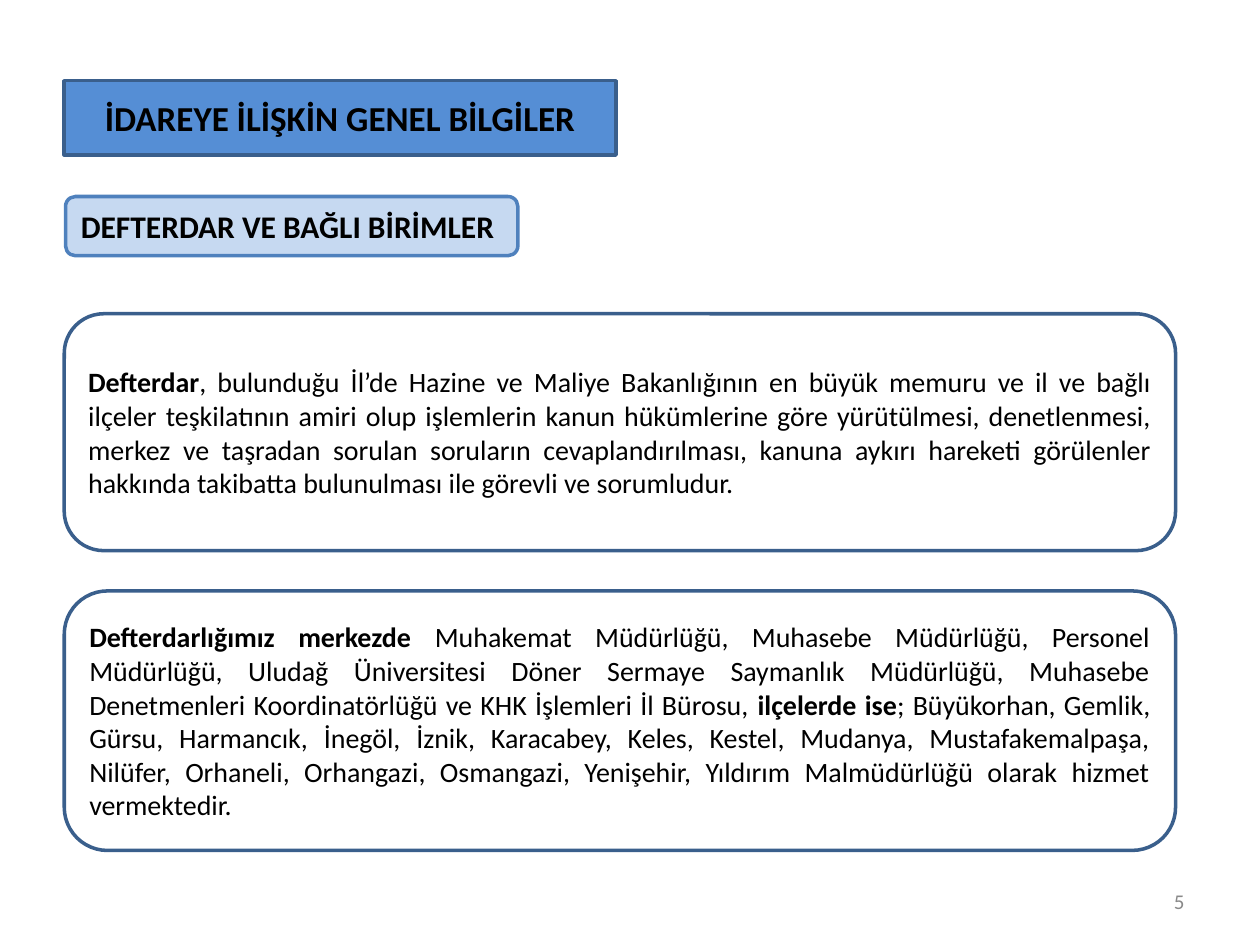
from lxml.etree import SubElement
from pptx import Presentation
from pptx.dml.color import RGBColor
from pptx.enum.shapes import MSO_SHAPE
from pptx.enum.text import MSO_ANCHOR, MSO_AUTO_SIZE, PP_ALIGN
from pptx.oxml.ns import qn
from pptx.util import Inches, Pt

COLORS = {
    "title": "558ED5",
    "subtitle": "C6D9F1",
    "dark_line": "3A5F8C",
    "light_line": "4F81BD",
    "text": "000000",
    "page_number": "898989",
}
FONT = "Calibri"
LEFT = 0.51
BODY_WIDTH = 8.82

# Each body is a list of (text, bold) spans
DEFTERDAR = [
    ("Defterdar", True),
    (", bulunduğu İl’de Hazine ve Maliye Bakanlığının en büyük memuru ve il ve "
     "bağlı ilçeler teşkilatının amiri olup işlemlerin kanun hükümlerine göre "
     "yürütülmesi, denetlenmesi, merkez ve taşradan sorulan soruların "
     "cevaplandırılması, kanuna aykırı hareketi görülenler hakkında takibatta "
     "bulunulması ile görevli ve sorumludur.", False),
]
UNITS = [
    ("Defterdarlığımız merkezde ", True),
    ("Muhakemat Müdürlüğü, Muhasebe Müdürlüğü, Personel Müdürlüğü, Uludağ "
     "Üniversitesi Döner Sermaye Saymanlık Müdürlüğü, Muhasebe Denetmenleri "
     "Koordinatörlüğü ve KHK İşlemleri İl Bürosu, ", False),
    ("ilçelerde ise", True),
    ("; Büyükorhan, Gemlik, Gürsu, Harmancık, İnegöl, İznik, Karacabey, Keles, "
     "Kestel, Mudanya, Mustafakemalpaşa, Nilüfer, Orhaneli, Orhangazi, Osmangazi, "
     "Yenişehir, Yıldırım Malmüdürlüğü olarak hizmet vermektedir.", False),
]


def color(name):
    return RGBColor.from_string(COLORS[name])


def style_box(box, line, fill=None):
    if fill:
        box.fill.solid()
        box.fill.fore_color.rgb = color(fill)
    else:
        box.fill.background()
    box.line.color.rgb = color(line)
    box.line.width = Pt(2)


def write(box, spans, size, align, text_color="text"):
    frame = box.text_frame
    frame.word_wrap = True
    frame.auto_size = MSO_AUTO_SIZE.NONE
    frame.vertical_anchor = MSO_ANCHOR.MIDDLE
    para = frame.paragraphs[0]
    para.alignment = align
    para.font.name = FONT
    para.font.size = Pt(size)
    para.font.color.rgb = color(text_color)
    for text, bold in spans:
        span = para.add_run()
        span.text = text
        span.font.bold = bold


def add_title(page, text):
    title = page.shapes.title
    title.left, title.top = Inches(LEFT), Inches(0.64)
    title.width, title.height = Inches(4.38), Inches(0.59)
    # Give the placeholder rounded corners
    geometry = SubElement(title.element.spPr, qn("a:prstGeom"), prst="roundRect")
    SubElement(geometry, qn("a:avLst"))
    style_box(title, "dark_line", "title")
    write(title, [(text, True)], 20, PP_ALIGN.CENTER)


def add_rounded_box(page, left, top, width, height, line, fill=None):
    box = page.shapes.add_shape(
        MSO_SHAPE.ROUNDED_RECTANGLE,
        Inches(left), Inches(top), Inches(width), Inches(height))
    box.shadow.inherit = False
    style_box(box, line, fill)
    return box


def main():
    deck = Presentation()
    deck.slide_width, deck.slide_height = Inches(10), Inches(7.5)
    page = deck.slides.add_slide(deck.slide_layouts[5])

    # Headings
    add_title(page, "İDAREYE İLİŞKİN GENEL BİLGİLER")
    subtitle = add_rounded_box(page, 0.52, 1.56, 3.59, 0.47, "light_line", "subtitle")
    write(subtitle, [("DEFTERDAR VE BAĞLI BİRİMLER", True)], 18, PP_ALIGN.LEFT)

    # Body boxes
    for top, height, spans in [(2.49, 1.88, DEFTERDAR), (4.69, 2.06, UNITS)]:
        body = add_rounded_box(page, LEFT, top, BODY_WIDTH, height, "dark_line")
        write(body, spans, 16, PP_ALIGN.JUSTIFY)

    # Page number
    number = page.shapes.add_textbox(Inches(7.17), Inches(6.95), Inches(2.33), Inches(0.4))
    write(number, [("5", False)], 12, PP_ALIGN.RIGHT, "page_number")

    deck.save("out.pptx")


if __name__ == "__main__":
    main()
